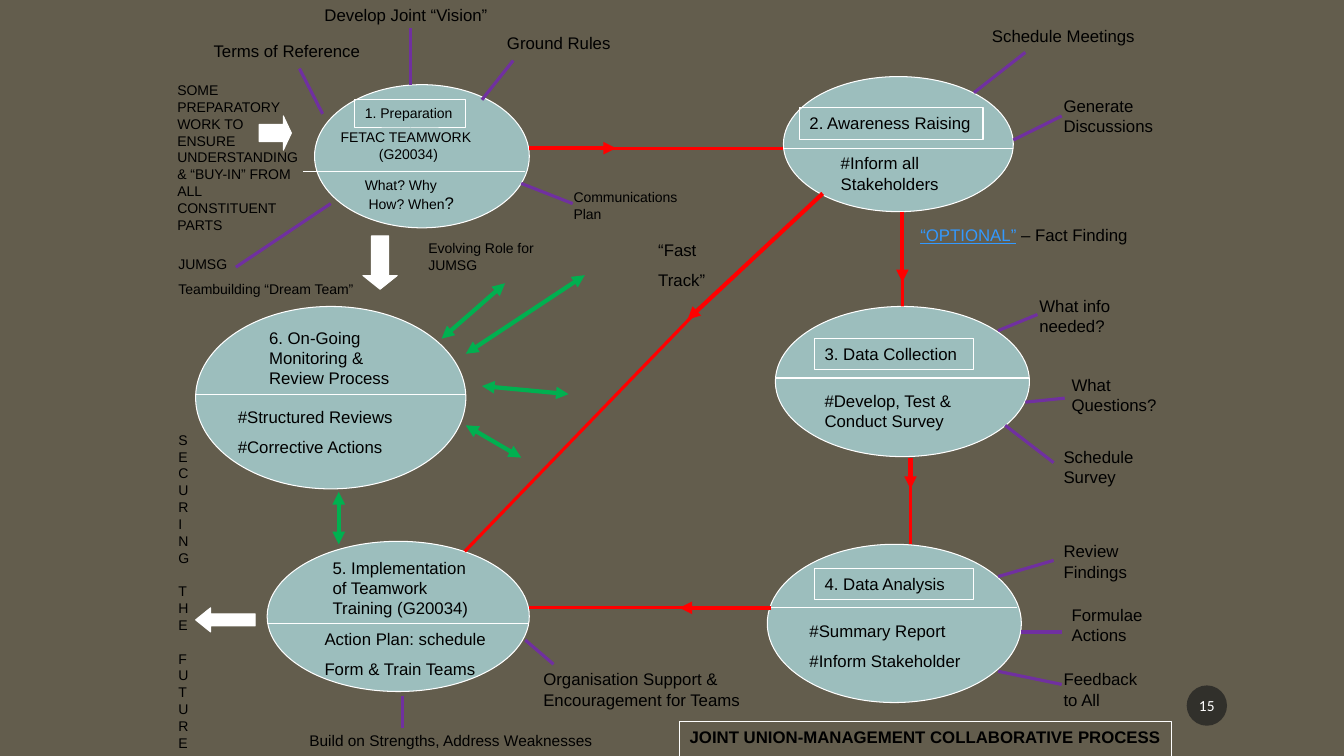
import pptx
import pptx.util
import pptx.dml.color
import pptx.enum.shapes
import pptx.enum.text
import pptx.oxml
import pptx.oxml.ns
from lxml import etree

SHAPE = pptx.enum.shapes.MSO_SHAPE
qn = pptx.oxml.ns.qn


def rgb(value):
    return pptx.dml.color.RGBColor.from_string(value)


def length(inches):
    return pptx.util.Cm(inches * 2.54)


class Diagram:
    font, ink, ground = "Arial", "000000", "635D4D"
    white, stage_fill = "FFFFFF", "9CBEBD"
    flow, feedback, spoke = "FF0000", "00B050", "7030A0"

    def __init__(self, slide):
        self.slide = slide
        slide.background.fill.solid()
        slide.background.fill.fore_color.rgb = rgb(self.ground)

    def style_run(self, run, size, color=ink, font=font):
        run.font.size = pptx.util.Pt(size)
        run.font.name = font
        run.font.color.rgb = rgb(color)

    def place(self, shape, box):
        shape.left, shape.top, shape.width, shape.height = map(length, box)

    def outline(self, shape):
        shape.line.color.rgb = rgb(self.white)
        shape.line.width = pptx.util.Pt(0.75)

    def fill_text(self, shape, text, size, hanging=0):
        frame = shape.text_frame
        frame.text = text
        frame.word_wrap = True
        frame.auto_size = pptx.enum.text.MSO_AUTO_SIZE.SHAPE_TO_FIT_TEXT
        frame.vertical_anchor = pptx.enum.text.MSO_ANCHOR.TOP
        for index, paragraph in enumerate(frame.paragraphs):
            paragraph.alignment = pptx.enum.text.PP_ALIGN.LEFT
            if index:
                paragraph.space_before = pptx.util.Pt(round(size * 0.575, 1))
            if hanging:
                properties = paragraph._p.get_or_add_pPr()
                properties.set("marL", str(length(hanging)))
                properties.set("indent", str(-length(hanging)))
            for line_break in paragraph._p.findall(qn("a:br")):
                etree.SubElement(line_break, qn("a:rPr")).set("sz", str(size * 100))
            for run in paragraph.runs:
                self.style_run(run, size)

    def title(self, box, text, size):
        heading = self.slide.shapes.title
        self.place(heading, box)
        self.fill_text(heading, text, size)
        heading.text_frame.paragraphs[0].runs[0].font.bold = True
        self.outline(heading)

    def text(self, box, text, size=12, outlined=False, hanging=0):
        label = self.slide.shapes.add_textbox(*map(length, box))
        self.fill_text(label, text, size, hanging)
        if outlined:
            self.outline(label)
        return label

    def add_run(self, label, text, size, color=ink):
        run = label.text_frame.paragraphs[0].add_run()
        run.text = text
        self.style_run(run, size, color)

    def shape(self, kind, box, fill, outlined=True):
        shape = self.slide.shapes.add_shape(kind, *map(length, box))
        shape.shadow.inherit = False
        shape.fill.solid()
        shape.fill.fore_color.rgb = rgb(fill)
        if outlined:
            self.outline(shape)
        else:
            shape.line.fill.background()
        return shape

    def line(self, ends, color, width, heads=()):
        line = self.slide.shapes.add_connector(
            pptx.enum.shapes.MSO_CONNECTOR.STRAIGHT, *map(length, ends))
        line.line.color.rgb = rgb(color)
        line.line.width = pptx.util.Pt(width)
        stroke = line._element.spPr.find(qn("a:ln"))
        for end in heads:
            etree.SubElement(stroke, qn("a:" + end)).set("type", "triangle")
        etree.SubElement(line._element.spPr, qn("a:effectLst"))
        return line


def main():
    deck = pptx.Presentation()
    deck.slide_width, deck.slide_height = length(13.33), length(7.5)
    diagram = Diagram(deck.slides.add_slide(deck.slide_layouts[5]))
    diagram.title((6.74, 7.16, 4.88, 0.3),
                  "JOINT UNION-MANAGEMENT COLLABORATIVE PROCESS", 12)

    # Stages: ellipse and the ends and height of its divider
    stages = {
        "preparation": ((3.12, 0.84, 2.13, 1.42), (3.01, 5.21, 1.7)),
        "awareness": ((7.77, 0.76, 2.28, 1.34), (7.77, 10.05, 1.47)),
        "collection": ((7.69, 3.04, 2.52, 1.49), (7.69, 10.21, 3.75)),
        "analysis": ((7.61, 5.4, 2.52, 1.57), (7.65, 10.09, 6.03)),
        "implementation": ((2.65, 5.37, 2.6, 1.49), (2.65, 5.25, 6.19)),
        "monitoring": ((1.94, 3.04, 2.68, 1.81), (1.94, 4.62, 3.91)),
    }
    ovals = {}
    for stage, (box, (left, right, y)) in stages.items():
        ovals[stage] = diagram.shape(SHAPE.OVAL, box, diagram.stage_fill)
        diagram.line((left, y, right, y), diagram.white, 0.75)

    # Stage names and contents
    diagram.text((3.52, 0.99, 1.1, 0.28), "1. Preparation", 10, True, 0.38)
    awareness_name = diagram.text((7.93, 1.07, 1.82, 0.31), "2. Awareness Raising", outlined=True)
    awareness_name.text_frame.word_wrap = False
    diagram.text((8.08, 3.36, 1.58, 0.31), "3. Data Collection", outlined=True)
    diagram.text((8.08, 5.64, 1.58, 0.31), "4. Data Analysis", outlined=True)
    diagram.text((3.28, 1.23, 1.81, 0.43), "FETAC TEAMWORK (G20034)", 10, hanging=0.38)
    questions = diagram.text((3.52, 1.7, 1.5, 0.47), "What? Why\v How? When", 10)
    diagram.add_run(questions, "?", 12)
    for box, text in (
        ((8.24, 1.47, 1.34, 0.5), "#Inform all Stakeholders"),
        ((8.08, 3.83, 1.5, 0.5), "#Develop, Test & Conduct Survey"),
        ((7.93, 6.11, 2.05, 0.6), "#Summary Report\n#Inform Stakeholder"),
        ((3.2, 5.48, 1.58, 0.71), "5. Implementation of Teamwork Training (G20034)"),
        ((3.12, 6.19, 2.05, 0.6), "Action Plan: schedule\nForm & Train Teams"),
        ((2.57, 3.2, 1.58, 0.71), "6. On-Going Monitoring & Review Process"),
        ((2.26, 3.99, 2.28, 0.6), "#Structured Reviews\n#Corrective Actions"),
        # Labels around the stages
        ((6.43, 2.33, 0.71, 0.6), "“Fast\nTrack”"),
        ((2.02, 0.36, 1.89, 0.3), "Terms of Reference"),
        ((3.12, 0, 2.44, 0.3), "Develop Joint “Vision”"),
        ((4.93, 0.28, 1.42, 0.3), "Ground Rules"),
        ((9.74, 0.21, 1.73, 0.3), "Schedule Meetings"),
        ((10.45, 0.9, 1.14, 0.5), "Generate Discussions"),
        ((10.21, 2.88, 1.02, 0.5), "What info needed?"),
        ((10.53, 3.67, 1.1, 0.5), "What Questions?"),
        ((10.45, 4.38, 0.95, 0.5), "Schedule Survey"),
        ((10.45, 5.32, 0.95, 0.5), "Review Findings"),
        ((10.53, 5.95, 0.95, 0.5), "Formulae Actions"),
        ((10.45, 6.59, 0.95, 0.5), "Feedback to All"),
        ((5.29, 6.59, 2.28, 0.5), "Organisation Support & Encouragement for Teams"),
    ):
        diagram.text(box, text)
    for box, text, size in (
        ((2.97, 7.2, 3.07, 0.28), "Build on Strengths, Address Weaknesses", 11),
        ((4.15, 2.33, 1.34, 0.43), "Evolving Role for JUMSG", 10),
        ((5.59, 1.82, 1.5, 0.43), "Communications Plan", 10),
        ((1.67, 4.23, 0.27, 2.96), "SECURING THE FUTURE", 10),
        ((1.67, 2.49, 2.05, 0.52), "JUMSG\nTeambuilding “Dream Team”", 10),
        ((1.66, 0.76, 1.42, 1.6), "SOME PREPARATORY WORK TO ENSURE UNDERSTANDING "
         "& “BUY-IN” FROM ALL CONSTITUENT PARTS", 10),
    ):
        diagram.text(box, text, size)
    optional = diagram.text((9.03, 2.18, 2.36, 0.3), "“OPTIONAL”")
    optional_word = optional.text_frame.paragraphs[0].runs[0]
    optional_word.font.underline = True
    optional_word.font.color.rgb = rgb("3399FF")
    diagram.add_run(optional, " – Fact Finding", 12)

    # Red process flow: thick arrows, then thin continuations
    for ends in ((5.25, 1.47, 6.11, 1.47), (9.03, 4.54, 9.03, 4.85), (8.95, 2.1, 8.95, 2.8),
                 (8.16, 1.92, 6.82, 3.17), (7.65, 6.03, 6.74, 6.03)):
        diagram.line(ends, diagram.flow, 3, ["tailEnd"])
    for ends in ((6.04, 1.47, 7.77, 1.47), (5.25, 6.03, 6.82, 6.03),
                 (9.03, 4.7, 9.03, 5.4), (4.61, 5.47, 6.9, 3.1)):
        diagram.line(ends, diagram.flow, 2.25)
    to_collection = diagram.line((8.95, 2.73, 8.95, 3.04), diagram.flow, 2.25)
    to_collection.end_connect(ovals["collection"], 0)

    # Green two-way feedback
    for ends in ((4.38, 3.36, 5.01, 2.81), (4.62, 3.51, 5.8, 2.73), (4.78, 3.83, 5.64, 3.91),
                 (4.62, 4.22, 5.17, 4.54), (3.36, 4.88, 3.36, 5.4)):
        diagram.line(ends, diagram.feedback, 3, ["headEnd", "tailEnd"])

    # Purple spokes from stages to labels
    for ends in ((2.34, 2.65, 3.28, 2.02), (2.97, 0.68, 3.2, 1.13), (4.07, 0.28, 4.07, 0.84),
                 (4.78, 0.99, 5.09, 0.6), (5.17, 1.82, 5.68, 2.02), (10.05, 1.39, 10.53, 1.15),
                 (3.99, 6.9, 3.99, 7.22), (9.9, 6.66, 10.53, 6.79), (9.9, 3.28, 10.29, 3.12),
                 (10.17, 0.52, 9.66, 0.92), (9.9, 5.72, 10.45, 5.56), (10.17, 3.99, 10.56, 3.95),
                 (10.13, 6.27, 10.53, 6.27), (9.97, 4.22, 10.45, 4.59), (5.21, 6.35, 5.49, 6.59)):
        diagram.line(ends, diagram.spoke, 2.25)

    # White block arrows
    for kind, box, head in ((SHAPE.LEFT_ARROW, (1.94, 6.03, 0.59, 0.24), 0.62),
                            (SHAPE.DOWN_ARROW, (3.6, 2.34, 0.34, 0.53), 0.4),
                            (SHAPE.RIGHT_ARROW, (2.57, 1.15, 0.32, 0.34), 0.25)):
        diagram.shape(kind, box, diagram.white).adjustments[1] = head

    # Page number
    page = diagram.shape(SHAPE.OVAL, (11.77, 6.8, 0.4, 0.4), "1D1D1D", outlined=False)
    tint = page._element.spPr.find(".//" + qn("a:srgbClr"))
    etree.SubElement(tint, qn("a:alpha")).set("val", "70000")
    page.text_frame.text = "15"
    page.text_frame.margin_left = page.text_frame.margin_right = length(0.02)
    page.text_frame.vertical_anchor = pptx.enum.text.MSO_ANCHOR.MIDDLE
    page_line = page.text_frame.paragraphs[0]
    page_line.alignment = pptx.enum.text.PP_ALIGN.CENTER
    diagram.style_run(page_line.runs[0], 11, diagram.white, "Calibri")

    deck.save("out.pptx")


if __name__ == "__main__":
    main()
